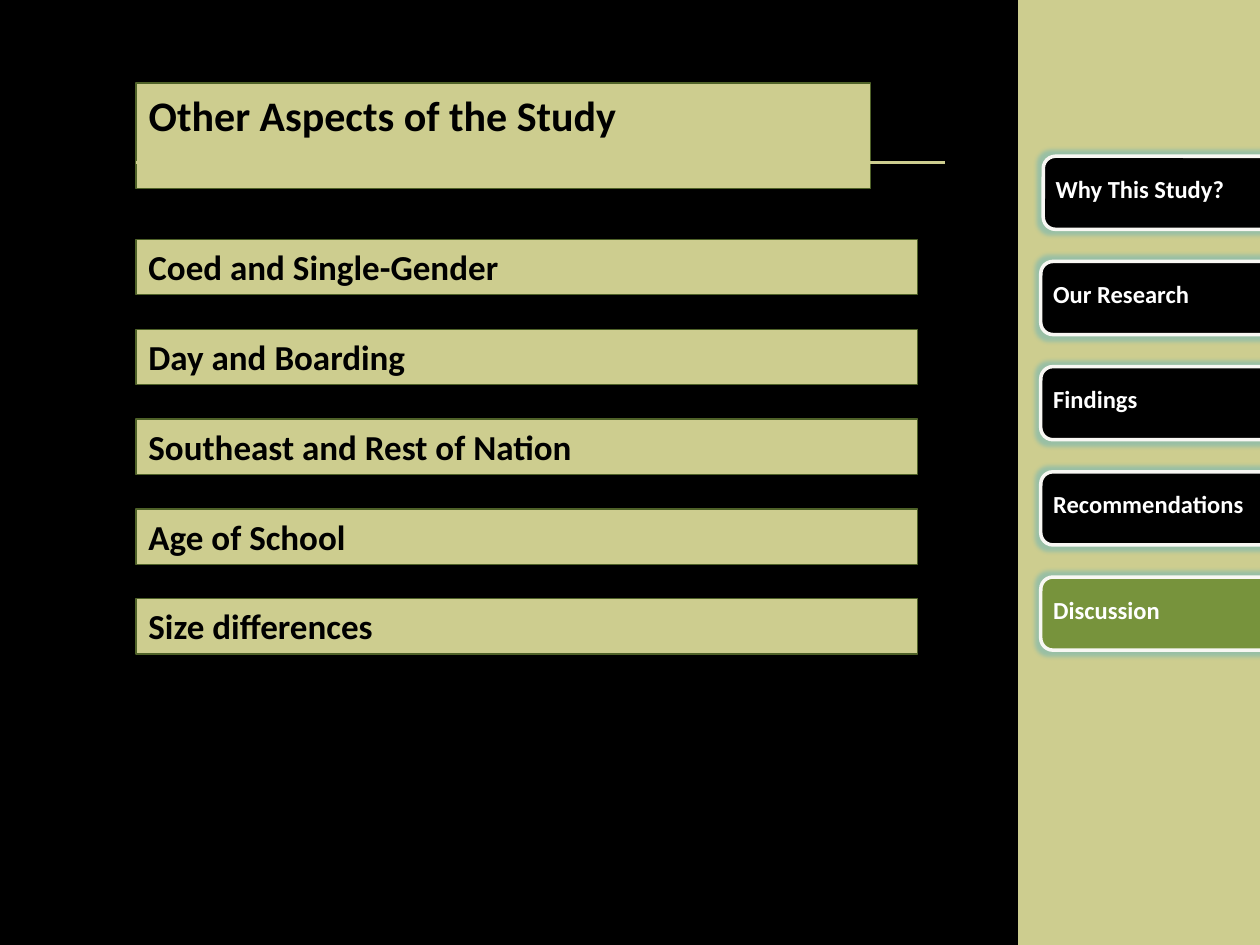
"""Build the "Other Aspects of the Study" slide with its side navigation."""
from dataclasses import dataclass

from lxml.etree import SubElement
from pptx import Presentation
from pptx.dml.color import RGBColor
from pptx.enum.shapes import MSO_CONNECTOR, MSO_SHAPE
from pptx.enum.text import MSO_ANCHOR, MSO_AUTO_SIZE, PP_ALIGN
from pptx.oxml.ns import qn
from pptx.util import Inches, Pt

BLACK = RGBColor(0x00, 0x00, 0x00)
WHITE = RGBColor(0xFF, 0xFF, 0xFF)
IVORY = RGBColor(0xF8, 0xF7, 0xF3)
SAND = RGBColor(0xCD, 0xCD, 0x8F)
GREEN = RGBColor(0x77, 0x93, 0x3C)
MOSS = RGBColor(0x4F, 0x62, 0x28)
GLOW = RGBColor(0x4B, 0xAC, 0xC6)

CELL = Inches(0.1)
COLS, ROWS = 100, 75
LEFT = 10.8
PANEL_LEFT = 80.8
ITEM_TOP, ITEM_PITCH = 19, 7.13
TAB_TOP, TAB_PITCH = 12.4, 8.35


@dataclass(frozen=True)
class Box:
    """A rectangle in grid columns and rows."""
    col: float
    row: float
    cols: float
    rows: float

    def emu(self) -> tuple[int, ...]:
        """Return left, top, width and height in EMU."""
        return tuple(round(n * CELL) for n in (self.col, self.row, self.cols, self.rows))


@dataclass(frozen=True)
class Tab:
    """A navigation tab on the side panel."""
    label: str
    col: float = 82.6
    fill: RGBColor = BLACK


TABS = (
    Tab("Why This Study?", col=82.8),
    Tab("Our Research"),
    Tab("Findings"),
    Tab("Recommendations"),
    Tab("Discussion", fill=GREEN),
)
ITEMS = (
    "Coed and Single-Gender",
    "Day and Boarding",
    "Southeast and Rest of Nation",
    "Age of School",
    "Size differences",
)


def write(sp, text: str, size: float, color: RGBColor) -> None:
    """Set one bold, left-aligned line of text."""
    tf = sp.text_frame
    tf.text = text
    tf.word_wrap = True
    tf.auto_size = MSO_AUTO_SIZE.SHAPE_TO_FIT_TEXT
    tf.vertical_anchor = MSO_ANCHOR.TOP
    p = tf.paragraphs[0]
    p.alignment = PP_ALIGN.LEFT
    font = p.runs[0].font
    font.name, font.size, font.bold = "Calibri", Pt(size), True
    font.color.rgb = color


def paint(sp, fill: RGBColor, line: RGBColor | None = None, width: float = 0.75) -> None:
    """Set a solid fill and an optional outline."""
    sp.fill.solid()
    sp.fill.fore_color.rgb = fill
    if line is None:
        sp.line.fill.background()
    else:
        sp.line.color.rgb = line
        sp.line.width = Pt(width)


def add_block(s, kind: MSO_SHAPE, box: Box):
    """Add a preset shape without a shadow."""
    sp = s.shapes.add_shape(kind, *box.emu())
    sp.shadow.inherit = False
    return sp


def add_glow(sp) -> None:
    """Put a soft glow around a shape."""
    effects = sp._element.spPr.find(qn("a:effectLst"))
    glow = SubElement(effects, qn("a:glow"), rad=str(Pt(5)))
    color = SubElement(glow, qn("a:srgbClr"), val=str(GLOW))
    SubElement(color, qn("a:alpha"), val="40000")


def add_tab(s, tab: Tab, row: float) -> None:
    """Draw a tab running off the right edge, with its label."""
    sp = add_block(s, MSO_SHAPE.ROUNDED_RECTANGLE, Box(tab.col, row, 19.2, 5.8))
    paint(sp, tab.fill, IVORY, 2)
    add_glow(sp)
    label = s.shapes.add_textbox(*Box(tab.col, row + 0.9, 17.5, 3.4).emu())
    write(label, tab.label, 14, WHITE)


def add_item(s, text: str, row: float) -> None:
    """Draw one topic bar."""
    sp = add_block(s, MSO_SHAPE.RECTANGLE, Box(LEFT, row, 62, 4.4))
    paint(sp, SAND, MOSS)
    write(sp, text, 20, BLACK)


def add_title(s, text: str) -> None:
    """Format the title placeholder and underline it with a rule."""
    sp = s.shapes.title
    sp.left, sp.top, sp.width, sp.height = Box(LEFT, 6.6, 58.3, 5).emu()
    paint(sp, SAND, MOSS)
    write(sp, text, 24, BLACK)
    col, row, cols, _ = Box(LEFT, 12.9, 64.2, 0).emu()
    rule = s.shapes.add_connector(MSO_CONNECTOR.STRAIGHT, col + cols, row, col, row)
    rule.line.color.rgb = SAND
    rule.line.width = Pt(2)
    SubElement(rule._element.spPr, qn("a:effectLst"))


def main() -> None:
    """Build and save the presentation."""
    prs = Presentation()
    prs.slide_width, prs.slide_height = COLS * CELL, ROWS * CELL
    s = prs.slides.add_slide(prs.slide_layouts[5])
    s.background.fill.solid()
    s.background.fill.fore_color.rgb = BLACK

    panel = add_block(s, MSO_SHAPE.RECTANGLE, Box(PANEL_LEFT, 0, COLS - PANEL_LEFT, ROWS))
    paint(panel, SAND)
    for i, tab in enumerate(TABS):
        add_tab(s, tab, TAB_TOP + i * TAB_PITCH)
    add_title(s, "Other Aspects of the Study")
    for i, text in enumerate(ITEMS):
        add_item(s, text, ITEM_TOP + i * ITEM_PITCH)
    prs.save("out.pptx")


if __name__ == "__main__":
    main()
